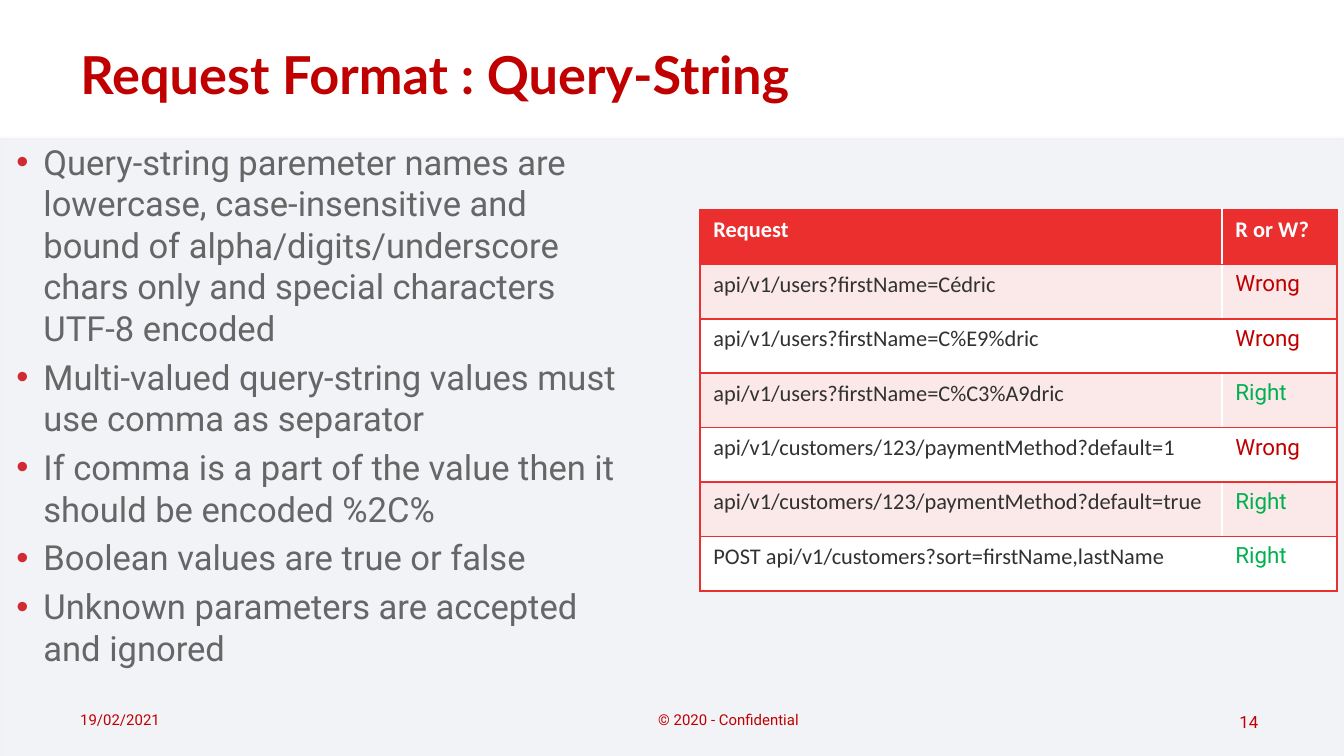
from pptx import Presentation
from pptx.dml.color import RGBColor
from pptx.enum.shapes import MSO_SHAPE as Shape
from pptx.enum.text import MSO_ANCHOR as Anchor, MSO_AUTO_SIZE as AutoSize, PP_ALIGN as Align
from pptx.oxml.ns import qn
from pptx.util import Pt
from lxml.etree import SubElement

SLIDE_W, SLIDE_H = 1344, 756
EMU_PER_PX = 9144000 / SLIDE_W

DARK_RED, RED, GREEN, PINK, WHITE = "C00000", "EB2F2F", "00B050", "FBE8E8", "FFFFFF"

RULES = [
    "Query-string paremeter names are lowercase, case-insensitive and bound of "
    "alpha/digits/underscore chars only and special characters UTF-8 encoded",
    "Multi-valued query-string values must use comma as separator",
    "If comma is a part of the value then it should be encoded %2C%",
    "Boolean values are true or false",
    "Unknown parameters are accepted and ignored",
]
REQUESTS = [
    ("api/v1/users?firstName=Cédric", "Wrong"),
    ("api/v1/users?firstName=C%E9%dric", "Wrong"),
    ("api/v1/users?firstName=C%C3%A9dric", "Right"),
    ("api/v1/customers/123/paymentMethod?default=1", "Wrong"),
    ("api/v1/customers/123/paymentMethod?default=true", "Right"),
    ("POST api/v1/customers?sort=firstName,lastName", "Right"),
]


def px(length):
    return round(length * EMU_PER_PX)


def color(hex_string):
    return RGBColor.from_string(hex_string)


def style(paragraph, size, face, hex_string, bold=False):
    font = paragraph.font
    font.size, font.name, font.bold = Pt(size), face, bold
    font.color.rgb = color(hex_string)


def place(shape, box):
    shape.left, shape.top, shape.width, shape.height = map(px, box)


def add_panel(slide, box):
    panel = slide.shapes.add_shape(Shape.RECTANGLE, *map(px, box))
    panel.shadow.inherit = False
    panel.fill.solid()
    panel.fill.fore_color.rgb = color("7B8DB3")
    panel.line.color.rgb = color("EBEBEB")
    panel.line.width = Pt(2)
    # Both fill and outline are 10% opaque
    for rgb in panel._element.spPr.iter(qn("a:srgbClr")):
        SubElement(rgb, qn("a:alpha"), val="10000")
    # Behind the placeholders
    slide.shapes._spTree.insert(2, panel._element)


def add_title(slide, box, text):
    title = slide.shapes.title
    place(title, box)
    frame = title.text_frame
    frame.text = text
    frame.vertical_anchor = Anchor.MIDDLE
    frame.auto_size = AutoSize.NONE
    heading = frame.paragraphs[0]
    heading.alignment = Align.LEFT
    style(heading, 28, "Lato", DARK_RED, bold=True)


def add_rules(slide, box, rules):
    body = slide.placeholders[1]
    place(body, box)
    frame = body.text_frame
    frame.text = "\n".join(rules)
    frame.vertical_anchor = Anchor.TOP
    frame.auto_size = AutoSize.NONE
    for index, rule in enumerate(frame.paragraphs):
        rule.space_before = Pt(4 if index else 0)
        props = rule._p.get_or_add_pPr()
        props.set("marL", str(px(27)))
        props.set("indent", str(px(-27)))
        bullet_color = SubElement(props, qn("a:buClr"))
        SubElement(bullet_color, qn("a:srgbClr"), val="D12A32")
        SubElement(props, qn("a:buChar"), char="•")
        style(rule, 18.5, "Roboto", "666666")


def set_borders(cell, sides):
    props = cell._tc.get_or_add_tcPr()
    for index, side in enumerate(sides):
        line = SubElement(props, qn(f"a:ln{side}"), w=str(Pt(1)))
        fill = SubElement(line, qn("a:solidFill"))
        SubElement(fill, qn("a:srgbClr"), val=RED)
        props.insert(index, line)


def add_requests(slide, box, requests):
    rows = [("Request", "R or W?")] + requests
    left, top, width, height = box
    table = slide.shapes.add_table(len(rows), 2, *map(px, box)).table
    verdict_width = 115
    table.columns[0].width = px(width - verdict_width)
    table.columns[1].width = px(verdict_width)
    for r, row in enumerate(rows):
        table.rows[r].height = px(height / len(rows))
        for c, text in enumerate(row):
            cell = table.cell(r, c)
            cell.text = text
            cell.fill.solid()
            cell.fill.fore_color.rgb = color(RED if r == 0 else PINK if r % 2 else WHITE)
            set_borders(cell, "RTB" if c else "LTB")
            entry = cell.text_frame.paragraphs[0]
            if r == 0:
                style(entry, 12, "Calibri", WHITE, bold=True)
            elif c == 0:
                style(entry, 12, "Calibri", "313131")
            else:
                style(entry, 12, "Roboto", GREEN if text == "Right" else DARK_RED)


def add_note(slide, box, text, size=8, align=Align.LEFT, indent=0):
    frame = slide.shapes.add_textbox(*map(px, box)).text_frame
    frame.word_wrap = True
    frame.vertical_anchor = Anchor.MIDDLE
    frame.text = text
    note = frame.paragraphs[0]
    note.alignment = align
    note._p.get_or_add_pPr().set("marL", str(px(indent)))
    style(note, size, "Roboto", DARK_RED)


def add_footer(slide, box):
    left, top, width, height = box
    add_note(slide, (left, top, 313, height), "19/02/2021")
    add_note(slide, (left + 393, top, 426, height), "© 2020 - Confidential", indent=185)
    add_note(slide, (left + width - 56, top + 5, 56, 34), "14", 9, Align.CENTER)


def main():
    deck = Presentation()
    deck.slide_width, deck.slide_height = px(SLIDE_W), px(SLIDE_H)
    slide = deck.slides.add_slide(deck.slide_layouts[1])
    add_panel(slide, (0, 138, SLIDE_W, 622))
    add_title(slide, (67, 13, 1210, 122), "Request Format : Query-String")
    add_rules(slide, (3, 134, 637, 521), RULES)
    add_requests(slide, (700, 210, 637, 381), REQUESTS)
    add_footer(slide, (67, 700, 1210, 40))
    deck.save("out.pptx")


if __name__ == "__main__":
    main()
